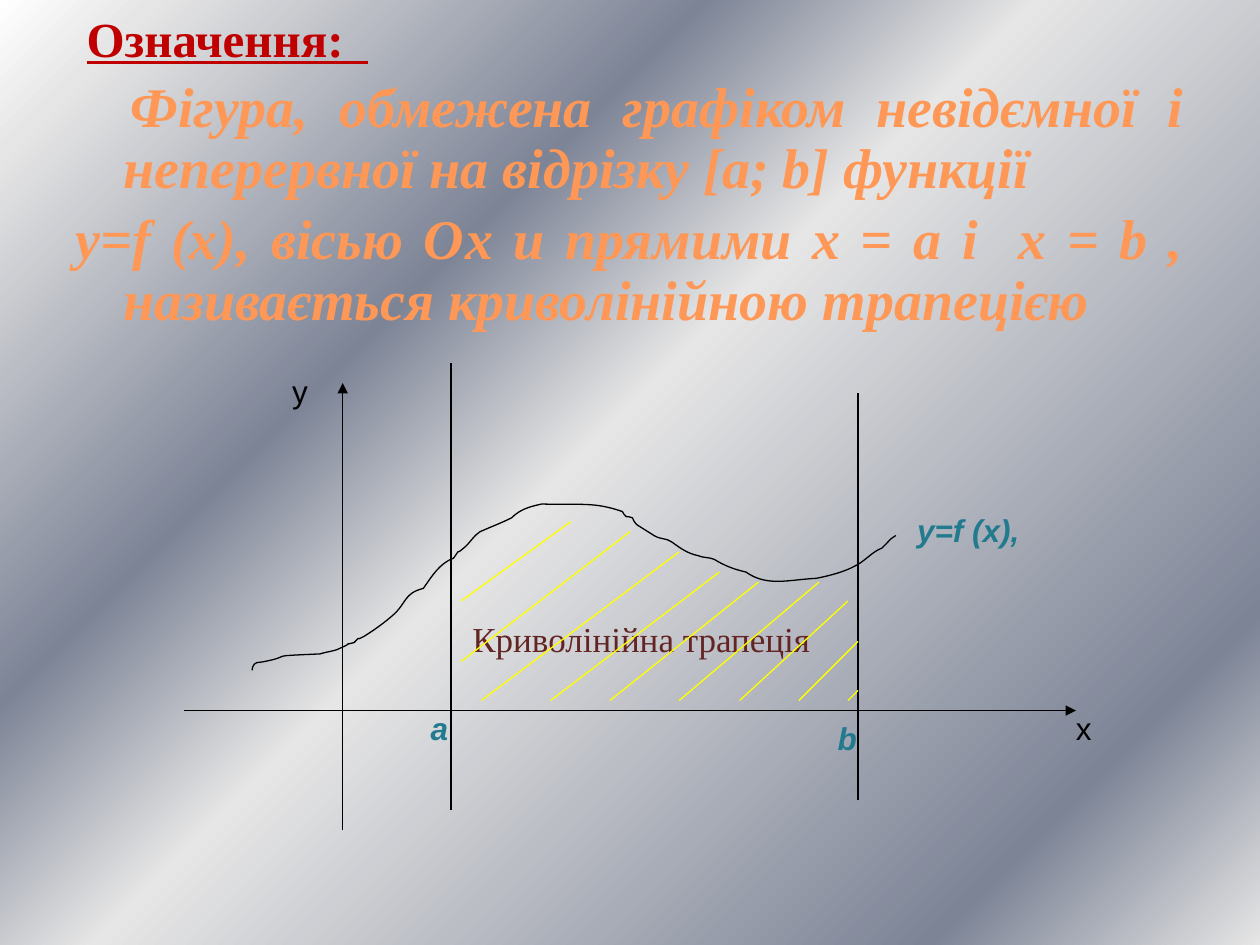
"""Build a slide defining the curvilinear trapezoid, with a hatched graph."""
import pptx
import pptx.dml.color
import pptx.enum.shapes
import pptx.enum.text
import pptx.oxml
import pptx.oxml.ns
import pptx.util
from pptx.util import Inches, Pt

BACKGROUND = [(0, "FFFFFF"), (7, "E6E6E6"), (32, "7D8496"),
              (47, "E6E6E6"), (85, "7D8496"), (100, "E6E6E6")]
SERIF, SANS = "Times New Roman", "Arial"
BLACK, TEAL, YELLOW = "000000", "227A8F", "FFFF00"
RED, ORANGE, BROWN = "C00000", "FF9856", "632523"
JUSTIFY, LEFT = pptx.enum.text.PP_ALIGN.JUSTIFY, pptx.enum.text.PP_ALIGN.LEFT

DEFINITION = [
    ("Означення:  ", 28, RED, False, LEFT, -0.29),
    ("Фігура, обмежена графіком невідємної і неперервної на відрізку [a; b] функції",
     32, ORANGE, True, JUSTIFY, 0.06),
    ("y=f (x), вісью Ох и прямими х = а і  х = b , називається криволінійною трапецією",
     32, ORANGE, True, JUSTIFY, -0.38),
]
LABELS = [
    ("x", 8.44, 5.58, 0.33, 18, SANS, BLACK, False),
    ("y", 2.22, 2.9, 0.33, 18, SANS, BLACK, False),
    ("y=f (x),", 7.18, 4.01, 1.01, 18, SANS, TEAL, True),
    ("а", 3.32, 5.58, 0.34, 18, SANS, TEAL, True),
    ("b", 6.55, 5.66, 0.35, 18, SANS, TEAL, True),
    ("Криволінійна трапеція", 3.65, 4.85, 2.91, 20, SERIF, BROWN, False),
]
AXES = [(2.72, 6.59, 2.72, 3.04), (1.46, 5.64, 8.54, 5.64)]
BOUNDS = [(3.58, 6.43, 3.58, 2.88), (6.81, 6.35, 6.81, 3.12)]
HATCHING = [
    (3.66, 4.77, 4.53, 4.14), (3.66, 5.25, 5, 4.22), (3.82, 5.56, 5.39, 4.38),
    (4.37, 5.56, 5.71, 4.54), (4.84, 5.56, 6.02, 4.62), (5.39, 5.56, 6.5, 4.62),
    (5.87, 5.56, 6.73, 4.77), (6.34, 5.56, 6.81, 5.09), (6.73, 5.56, 6.81, 5.48),
]
CURVE_START = (2, 5.32)
CURVE = [
    (2.01, 5.3, 2, 5.28, 2.02, 5.27), (2.04, 5.25, 2.07, 5.26, 2.1, 5.25),
    (2.35, 5.2, 2.08, 5.21, 2.54, 5.19), (2.6, 5.17, 2.66, 5.17, 2.71, 5.14),
    (2.84, 5.08, 2.69, 5.13, 2.81, 5.1), (2.88, 5.03, 2.8, 5.1, 2.89, 5.05),
    (2.97, 5, 3.04, 4.95, 3.11, 4.89), (3.23, 4.79, 3.2, 4.71, 3.36, 4.67),
    (3.43, 4.57, 3.49, 4.47, 3.6, 4.43), (3.67, 4.33, 3.6, 4.42, 3.68, 4.35),
    (3.73, 4.31, 3.76, 4.25, 3.81, 4.22), (3.9, 4.18, 3.98, 4.15, 4.06, 4.11),
    (4.13, 4.04, 4.21, 4.02, 4.3, 4), (4.61, 4.01, 4.71, 3.98, 4.94, 4.06),
    (4.95, 4.07, 4.95, 4.09, 4.97, 4.1), (4.98, 4.1, 5, 4.1, 5.02, 4.11),
    (5.03, 4.12, 5.03, 4.15, 5.05, 4.16), (5.06, 4.17, 5.16, 4.23, 5.19, 4.25),
    (5.23, 4.28, 5.29, 4.27, 5.33, 4.3), (5.4, 4.35, 5.45, 4.39, 5.54, 4.41),
    (5.59, 4.43, 5.62, 4.42, 5.67, 4.44), (5.75, 4.49, 5.83, 4.52, 5.92, 4.54),
    (6.09, 4.66, 6.26, 4.6, 6.48, 4.59), (6.58, 4.57, 6.7, 4.54, 6.79, 4.49),
    (6.87, 4.45, 6.92, 4.38, 7, 4.35), (7.09, 4.26, 7.05, 4.29, 7.11, 4.25),
]


def color(value):
    return pptx.dml.color.RGBColor.from_string(value)


def element(tag, **attributes):
    node = pptx.oxml.parse_xml(f"<a:{tag} {pptx.oxml.ns.nsdecls('a')}/>")
    for name, value in attributes.items():
        node.set(name, str(value))
    return node


def paint_background(page):
    fill = page.background.fill
    fill.gradient()
    fill.gradient_angle = 315
    stops = page.element.find(".//" + pptx.oxml.ns.qn("a:gsLst"))
    for stop in list(stops):
        stops.remove(stop)
    for position, value in BACKGROUND:
        stop = element("gs", pos=position * 1000)
        stop.append(element("srgbClr", val=value))
        stops.append(stop)


def style(para, size, font, value, bold, italic):
    for span in para.runs:
        span.font.size, span.font.name = Pt(size), font
        span.font.bold, span.font.italic = bold, italic
        span.font.color.rgb = color(value)


def add_definition(page):
    frame = page.shapes.add_textbox(
        Inches(0.5), Inches(0.07), Inches(9), Inches(2.52)).text_frame
    frame.word_wrap = True
    frame.text = "\n".join(row[0] for row in DEFINITION)
    for para, (_, size, value, italic, align, indent) in zip(frame.paragraphs, DEFINITION):
        style(para, size, SERIF, value, True, italic)
        para.alignment, para.line_spacing = align, 0.9
        para.space_before = Pt(size * 0.2)
        properties = para._p.get_or_add_pPr()
        properties.set("marL", str(Inches(0.38)))
        properties.set("indent", str(Inches(indent)))
    frame.paragraphs[0].runs[0].font.underline = True


def add_label(page, text, left, top, width, size, font, value, strong):
    frame = page.shapes.add_textbox(
        Inches(left), Inches(top), Inches(width), Inches(size / 45)).text_frame
    frame.word_wrap = False
    frame.text = text
    style(frame.paragraphs[0], size, font, value, strong, strong)


def add_line(page, ends, value, arrow=False):
    line = page.shapes.add_connector(
        pptx.enum.shapes.MSO_CONNECTOR.STRAIGHT, *map(Inches, ends))
    line.line.color.rgb, line.line.width = color(value), Pt(0.75)
    if arrow:
        line.line._get_or_add_ln().append(element("tailEnd", type="triangle"))
    line._element.spPr.append(element("effectLst"))


def add_curve(page):
    builder = page.shapes.build_freeform(*map(Inches, CURVE_START))
    ends = [(Inches(x), Inches(y)) for *_, x, y in CURVE]
    builder.add_line_segments(ends, close=False)
    curve = builder.convert_to_shape()
    segments = curve._element.findall(".//" + pptx.oxml.ns.qn("a:lnTo"))
    for segment, values in zip(segments, CURVE):
        bend = element("cubicBezTo")
        for x, y in zip(values[::2], values[1::2]):
            bend.append(element("pt", x=Inches(x) - curve.left, y=Inches(y) - curve.top))
        segment.getparent().replace(segment, bend)
    curve.fill.background()
    curve.line.color.rgb, curve.line.width = color(BLACK), Pt(0.75)
    curve.shadow.inherit = False


def main():
    deck = pptx.Presentation()
    deck.slide_width, deck.slide_height = Inches(10), Inches(7.5)
    page = deck.slides.add_slide(deck.slide_layouts[6])
    paint_background(page)
    add_definition(page)
    for ends in AXES:
        add_line(page, ends, BLACK, arrow=True)
    add_curve(page)
    for ends in BOUNDS:
        add_line(page, ends, BLACK)
    for label in LABELS:
        add_label(page, *label)
    for ends in HATCHING:
        add_line(page, ends, YELLOW)
    deck.save("out.pptx")


if __name__ == "__main__":
    main()
